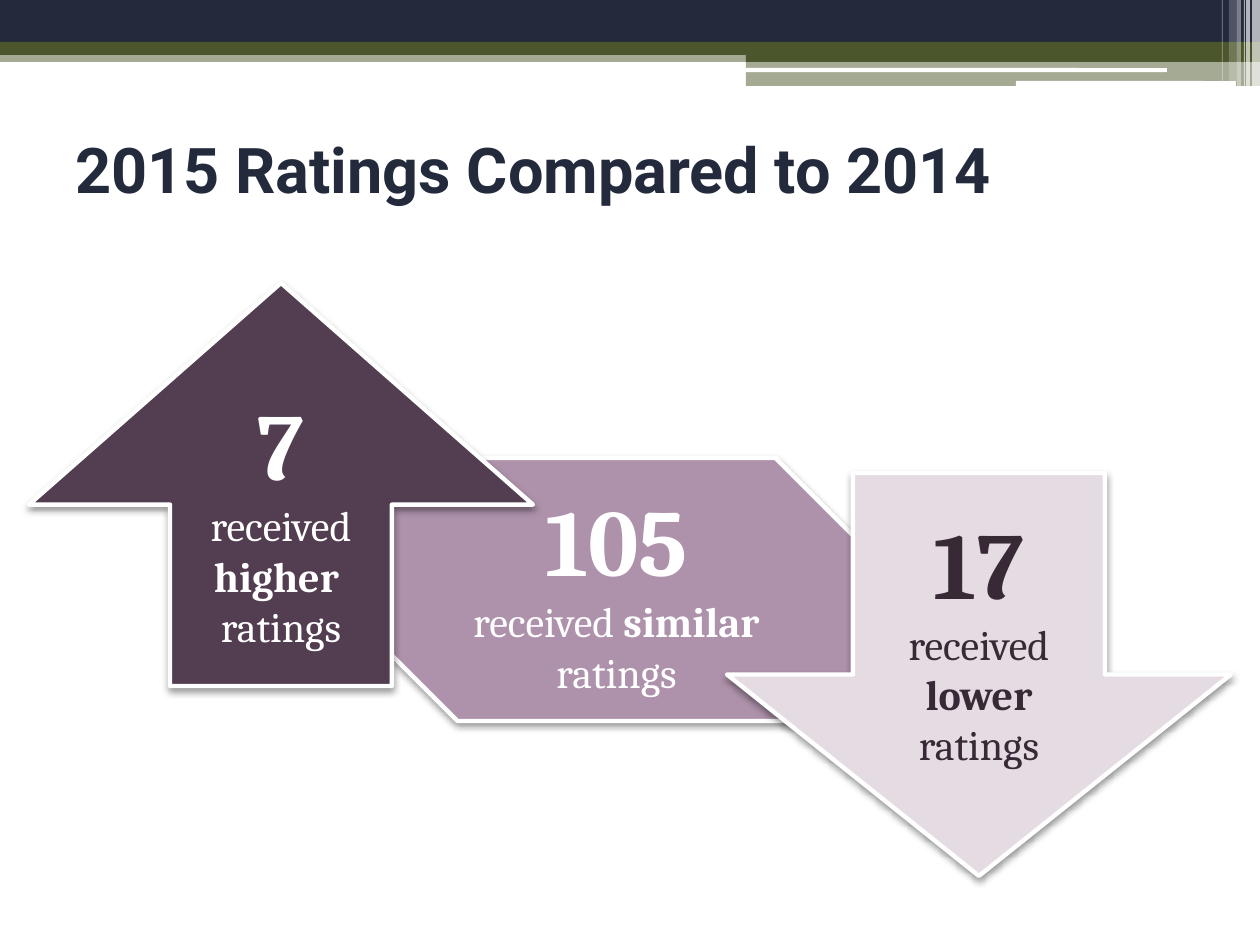
from lxml.etree import SubElement
from pptx import Presentation
from pptx.dml.color import RGBColor
from pptx.enum.shapes import MSO_SHAPE as SHAPE
from pptx.enum.text import MSO_ANCHOR as ANCHOR, MSO_AUTO_SIZE as AUTO, PP_ALIGN as ALIGN
from pptx.oxml.ns import qn
from pptx.util import Emu, Pt

THEME = {
    "navy": "222A3C", "olive": "4C562C", "white": "FFFFFF", "black": "000000",
    "plum": "523E50", "mauve": "AE92AB", "pale": "E4DBE3", "dark": "372935",
    "title_font": "Roboto", "body_font": "Cambria",
    "title_size": 36, "number_size": 54, "label_size": 24, "outline": 2.5,
}

# Content: boxes are left, top, width, height in px
TITLE = ("2015 Ratings Compared to 2014", (63, 116, 1134, 105))
BANDS = [  # box, colour, opacity in percent, rounded
    ((0, 50, 1260, 12), "olive", 50, False),
    ((0, 0, 1260, 43), "navy", 100, False),
    ((0, 42, 1260, 13), "olive", 100, False),
    ((746, 49, 514, 13), "olive", 100, False),
    ((746, 61, 514, 25), "olive", 50, False),
    ((745, 68, 422, 4), "white", 100, True),
    ((1016, 81, 220, 5), "white", 100, True),
]
STRIPES = [  # left, width, height, opacity in percent
    (1252, 8, 86, 65), (1246, 4, 86, 65), (1244, 1, 86, 60),
    (1237, 4, 86, 40), (1229, 8, 81, 20), (1222, 1, 81, 30),
]
RATINGS = [
    {"shape": SHAPE.SNIP_2_DIAG_RECTANGLE, "box": (355, 458, 523, 263),
     "adjust": (0, 0.39), "fill": "mauve", "color": "white",
     "anchor": ANCHOR.MIDDLE, "inset": 0, "number": "105", "change": "similar"},
    {"shape": SHAPE.UP_ARROW, "box": (29, 283, 504, 403),
     "adjust": (0.44, 0.55), "fill": "plum", "color": "white",
     "anchor": ANCHOR.TOP, "inset": 6, "number": "7", "change": "higher "},
    {"shape": SHAPE.DOWN_ARROW, "box": (727, 473, 504, 403),
     "adjust": (0.5, 0.5), "fill": "pale", "color": "dark",
     "anchor": ANCHOR.BOTTOM, "inset": 6, "number": "17", "change": "lower"},
]


def px(n):
    return Emu(round(n * 914400 / 126))


def rgb(name):
    return RGBColor.from_string(THEME[name])


def set_attrs(obj, **values):
    for name, value in values.items():
        setattr(obj, name, value)


def add_shape(slide, kind, box, color, opacity=100):
    sp = slide.shapes.add_shape(kind, *map(px, box))
    sp.shadow.inherit = False
    sp.fill.solid()
    sp.fill.fore_color.rgb = rgb(color)
    sp.line.fill.background()
    if opacity < 100:
        clr = sp.fill._xPr.find(".//" + qn("a:srgbClr"))
        SubElement(clr, qn("a:alpha"), val=str(opacity * 1000))
    return sp


def add_shadow(sp):
    effects = sp._element.spPr.find(qn("a:effectLst"))
    shadow = SubElement(effects, qn("a:outerShdw"), blurRad=str(Pt(4.1)),
                        dist=str(Pt(2)), dir="5400000", rotWithShape="0")
    clr = SubElement(shadow, qn("a:srgbClr"), val=THEME["black"])
    SubElement(clr, qn("a:alpha"), val="40000")


def add_run(p, text, font, size, color, bold):
    r = p.add_run()
    r.text = text
    set_attrs(r.font, name=THEME[font], size=Pt(THEME[size]), bold=bold)
    r.font.color.rgb = rgb(color)


def add_rating(slide, item):
    sp = add_shape(slide, item["shape"], item["box"], item["fill"])
    for i, value in enumerate(item["adjust"]):
        sp.adjustments[i] = value
    sp.line.color.rgb = rgb("white")
    sp.line.width = Pt(THEME["outline"])
    add_shadow(sp)

    tf = sp.text_frame
    inset = px(item["inset"])
    set_attrs(tf, word_wrap=True, vertical_anchor=item["anchor"], margin_left=0,
              margin_right=0, margin_top=inset, margin_bottom=inset)
    p = tf.paragraphs[0]
    p.alignment = ALIGN.CENTER
    add_run(p, item["number"], "body_font", "number_size", item["color"], True)
    p = tf.add_paragraph()
    p.alignment = ALIGN.CENTER
    label = ("body_font", "label_size", item["color"])
    add_run(p, "received ", *label, False)
    add_run(p, item["change"], *label, True)
    p.add_line_break()
    add_run(p, "ratings", *label, False)


def main():
    prs = Presentation()
    set_attrs(prs, slide_width=px(1260), slide_height=px(945))
    slide = prs.slides.add_slide(prs.slide_layouts[5])

    # Header bands and the stripes at their right end
    for box, color, opacity, rounded in BANDS:
        kind = SHAPE.ROUNDED_RECTANGLE if rounded else SHAPE.RECTANGLE
        add_shape(slide, kind, box, color, opacity)
    for left, width, height, opacity in STRIPES:
        add_shape(slide, SHAPE.RECTANGLE, (left, 0, width, height), "white", opacity)

    # Title
    text, box = TITLE
    title = slide.shapes.title
    set_attrs(title, **dict(zip(("left", "top", "width", "height"), map(px, box))))
    tf = title.text_frame
    set_attrs(tf, word_wrap=True, auto_size=AUTO.NONE, vertical_anchor=ANCHOR.MIDDLE)
    p = tf.paragraphs[0]
    p.alignment = ALIGN.LEFT
    add_run(p, text, "title_font", "title_size", "navy", True)

    # Rating changes, back to front
    for item in RATINGS:
        add_rating(slide, item)

    prs.save("out.pptx")


if __name__ == "__main__":
    main()
